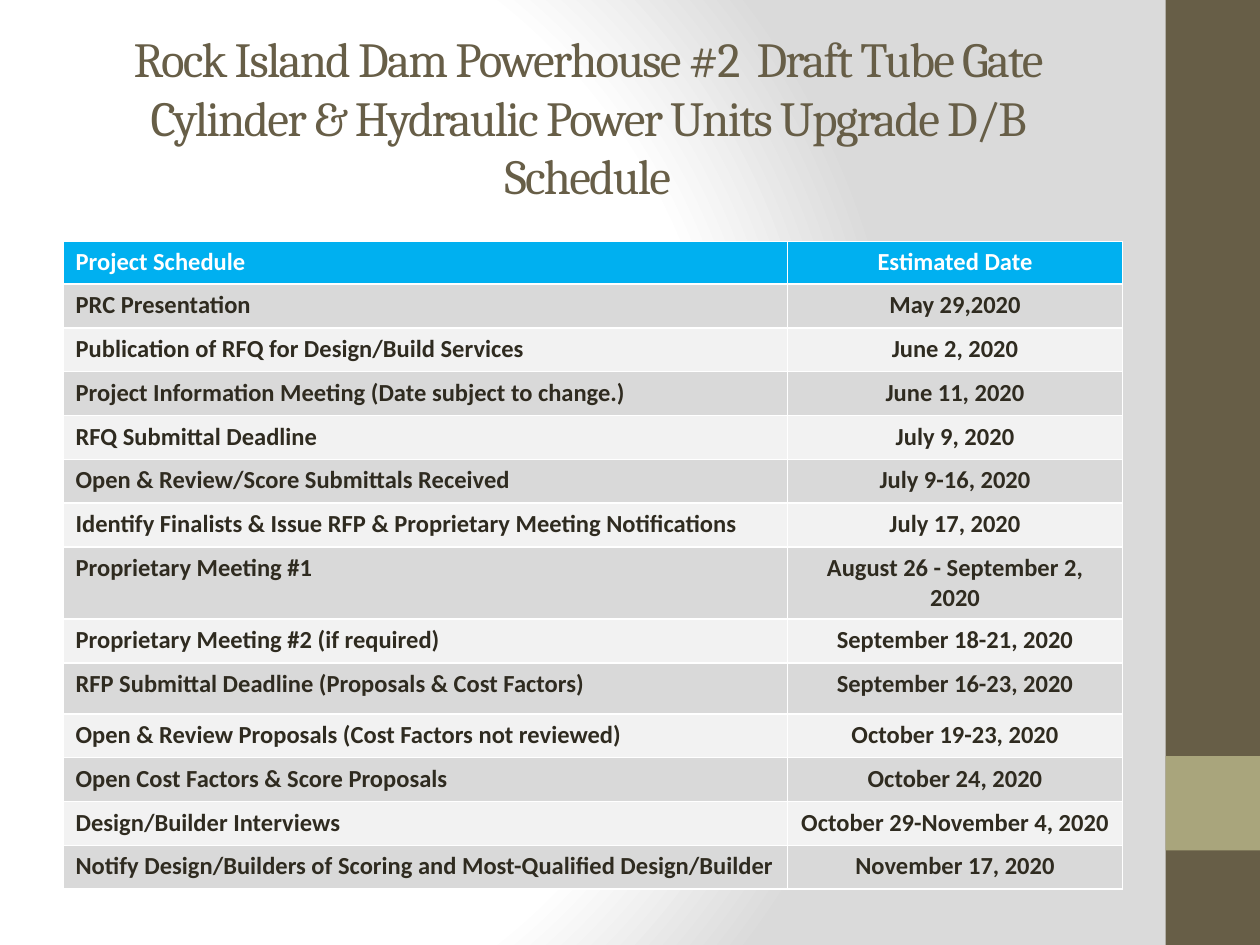
from lxml import etree
from pptx import Presentation
from pptx.dml.color import RGBColor
from pptx.enum.shapes import MSO_SHAPE
from pptx.enum.text import MSO_ANCHOR, MSO_AUTO_SIZE, PP_ALIGN
from pptx.oxml import parse_xml
from pptx.oxml.ns import nsdecls, qn
from pptx.util import Inches, Pt

RECT = MSO_SHAPE.RECTANGLE
MIDDLE = MSO_ANCHOR.MIDDLE
NO_FIT = MSO_AUTO_SIZE.NONE
LEFT, CENTER = PP_ALIGN.LEFT, PP_ALIGN.CENTER

WHITE = RGBColor(0xFF, 0xFF, 0xFF)
SILVER = RGBColor(0xDA, 0xDA, 0xDA)
BROWN = RGBColor(0x67, 0x5E, 0x47)
OLIVE = RGBColor(0xA9, 0xA5, 0x7C)
INK = RGBColor(0x2F, 0x2B, 0x20)
BLUE = RGBColor(0x00, 0xB0, 0xF0)
BANDS = (RGBColor(0xF2, 0xF2, 0xF2), RGBColor(0xD9, 0xD9, 0xD9))

TITLE = ("Rock Island Dam Powerhouse #2  Draft Tube Gate Cylinder "
         "& Hydraulic Power Units Upgrade D/B Schedule")

SCHEDULE = [
    ("Project Schedule", "Estimated Date"),
    ("PRC Presentation", "May 29,2020"),
    ("Publication of RFQ for Design/Build Services", "June 2, 2020"),
    ("Project Information Meeting (Date subject to change.)", "June 11, 2020"),
    ("RFQ Submittal Deadline", "July 9, 2020"),
    ("Open & Review/Score Submittals Received", "July 9-16, 2020"),
    ("Identify Finalists & Issue RFP & Proprietary Meeting Notifications",
     "July 17, 2020"),
    ("Proprietary Meeting #1", "August 26 - September 2, 2020"),
    ("Proprietary Meeting #2 (if required)", "September 18-21, 2020"),
    ("RFP Submittal Deadline (Proposals & Cost Factors)",
     "September 16-23, 2020"),
    ("Open & Review Proposals (Cost Factors not reviewed)",
     "October 19-23, 2020"),
    ("Open Cost Factors & Score Proposals", "October 24, 2020"),
    ("Design/Builder Interviews", "October 29-November 4, 2020"),
    ("Notify Design/Builders of Scoring and Most-Qualified Design/Builder",
     "November 17, 2020"),
]


def grid(n):
    """Length of n grid units; the slide is 100 columns by 75 rows."""
    return Inches(n / 10)


class Deck:
    title_font, body_font = "Cambria", "Calibri"
    title_size, body_size = Pt(28), Pt(14)

    def __init__(self):
        self.prs = Presentation()
        self.prs.slide_width, self.prs.slide_height = grid(100), grid(75)
        self.s = self.prs.slides.add_slide(self.prs.slide_layouts[5])

    def background(self, inner, outer):
        stops = "".join(
            f'<a:gs pos="{pos}"><a:srgbClr val="{color}"/></a:gs>'
            for pos, color in ((0, inner), (75000, inner), (100000, outer)))
        bg = parse_xml(
            f'<p:bg {nsdecls("p", "a")}><p:bgPr><a:gradFill>'
            f'<a:gsLst>{stops}</a:gsLst><a:path path="circle">'
            '<a:fillToRect l="20000" t="50000" r="100000" b="50000"/>'
            '</a:path></a:gradFill><a:effectLst/></p:bgPr></p:bg>')
        self.s.element.cSld.insert(0, bg)

    def block(self, box, color):
        sp = self.s.shapes.add_shape(RECT, *map(grid, box))
        sp.shadow.inherit = False
        sp.fill.solid()
        sp.fill.fore_color.rgb = color
        sp.line.fill.background()

    def format(self, p, align, font, size, color, bold=False):
        p.alignment = align
        for r in p.runs:
            r.font.name, r.font.size, r.font.bold = font, size, bold
            r.font.color.rgb = color

    def title(self, text, box):
        sp = self.s.shapes.title
        sp.left, sp.top, sp.width, sp.height = map(grid, box)
        tf = sp.text_frame
        tf.text = text
        tf.word_wrap, tf.auto_size, tf.vertical_anchor = True, NO_FIT, MIDDLE
        p = tf.paragraphs[0]
        self.format(p, CENTER, self.title_font, self.title_size, BROWN)
        p.runs[0].font._element.set("spc", "-100")

    def cell(self, cell, text, align, color, fill, sides):
        cell.text = text
        self.format(cell.text_frame.paragraphs[0], align, self.body_font,
                    self.body_size, color, bold=True)
        tc_pr = cell._tc.get_or_add_tcPr()
        for side in sides:
            ln = etree.SubElement(tc_pr, qn(f"a:ln{side}"), w=str(Pt(1)))
            solid = etree.SubElement(ln, qn("a:solidFill"))
            etree.SubElement(solid, qn("a:srgbClr"), val=str(WHITE))
        cell.fill.solid()
        cell.fill.fore_color.rgb = fill

    def table(self, rows, box, widths, heights):
        table = self.s.shapes.add_table(
            len(rows), len(widths), *map(grid, box)).table
        for col, width in zip(table.columns, widths):
            col.width = grid(width)
        for i, (row, height) in enumerate(zip(rows, heights)):
            table.rows[i].height = grid(height)
            color, fill = (INK, BANDS[i % 2]) if i else (WHITE, BLUE)
            for j, text in enumerate(row):
                self.cell(table.cell(i, j), text, CENTER if j else LEFT,
                          color, fill, "LRTB" if j else "RTB")


def main():
    deck = Deck()
    deck.background(WHITE, SILVER)

    # Side bar with its accent square
    deck.block((92.5, 0, 7.5, 75), BROWN)
    deck.block((92.5, 60, 7.5, 7.5), OLIVE)

    deck.title(TITLE, (5, 3, 83.3, 12.5))

    # Schedule: even rows, except the two-line and the taller one
    heights = [3.4] + [3.48] * (len(SCHEDULE) - 1)
    heights[7], heights[9] = 5.74, 4.04
    widths = (57.5, 26.6)
    deck.table(SCHEDULE, (5, 19.15, sum(widths), sum(heights)),
               widths, heights)

    deck.prs.save("out.pptx")


if __name__ == "__main__":
    main()
